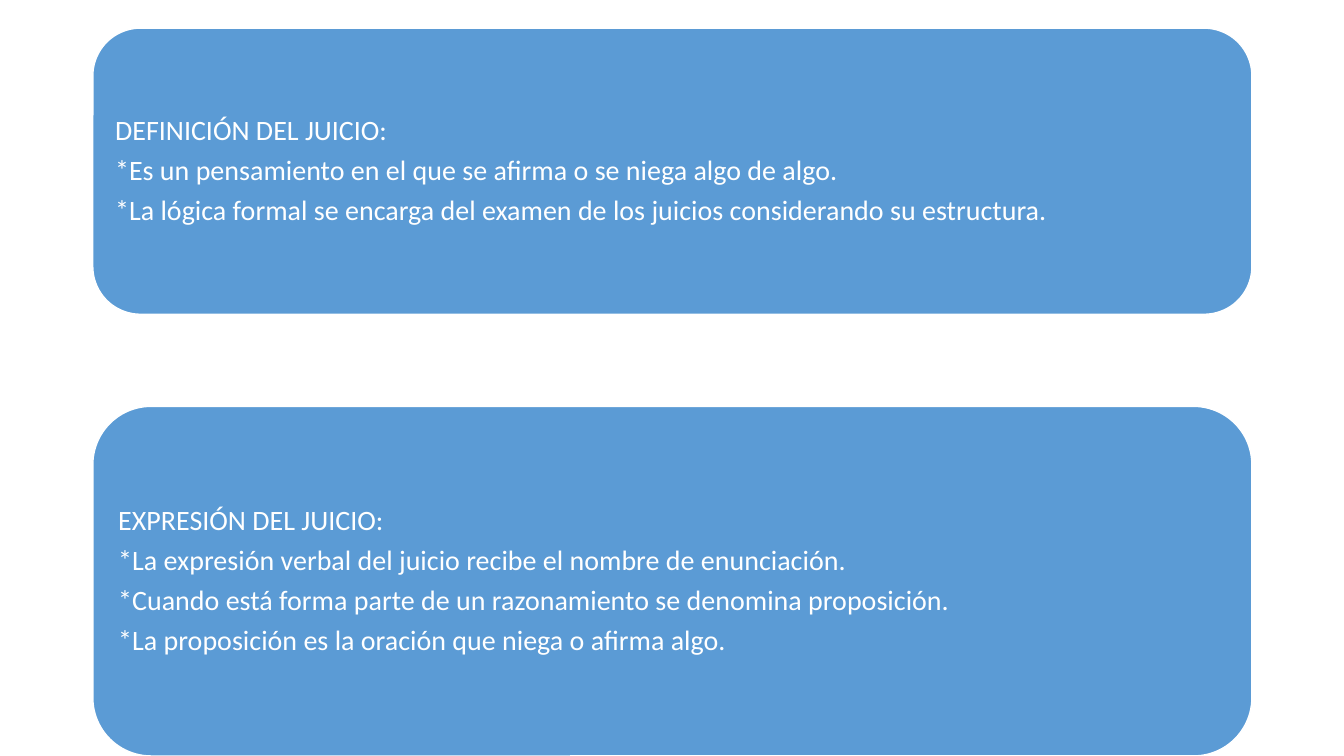
from pptx import Presentation
from pptx import util as u
from pptx.dml.color import RGBColor
from pptx.enum import shapes, text

COLOURS = {"panel": "5B9BD5", "light": "FFFFFF"}

PANELS = [
    (0.71, 7.21, [
        "DEFINICIÓN DEL JUICIO:",
        "*Es un pensamiento en el que se afirma o se niega algo de algo.",
        "*La lógica formal se encarga del examen de los juicios considerando su estructura.",
    ]),
    (10.24, 8.81, [
        "EXPRESIÓN DEL JUICIO:",
        "*La expresión verbal del juicio recibe el nombre de enunciación.",
        "*Cuando está forma parte de un razonamiento se denomina proposición.",
        "*La proposición es la oración que niega o afirma algo.",
    ]),
]


class PanelSlide:
    """Holds the text style and the page that receives the panels."""

    font = "Calibri"
    size = 20
    left, width = 2.34, 29.21
    inset = 0.21

    def __init__(self, deck):
        self.page = deck.slides.add_slide(deck.slide_layouts[6])

    def colour(self, name):
        return RGBColor.from_string(COLOURS[name])

    def panel(self, top, height, lines):
        box = self.page.shapes.add_shape(
            shapes.MSO_SHAPE.ROUNDED_RECTANGLE,
            u.Cm(self.left), u.Cm(top), u.Cm(self.width), u.Cm(height))
        box.shadow.inherit = False
        box.fill.solid()
        box.fill.fore_color.rgb = self.colour("panel")
        box.line.color.rgb = self.colour("light")
        box.line.width = u.Pt(1)
        frame = box.text_frame
        frame.word_wrap = True
        frame.vertical_anchor = text.MSO_ANCHOR.MIDDLE
        frame.margin_left = frame.margin_right = u.Cm(self.inset)
        frame.margin_top = frame.margin_bottom = u.Cm(self.inset)
        for index, line in enumerate(lines):
            para = frame.add_paragraph() if index else frame.paragraphs[0]
            self.text_line(para, line)

    def text_line(self, para, line):
        para.alignment = text.PP_ALIGN.LEFT
        para.line_spacing = 0.9
        para.space_after = u.Pt(7)
        span = para.add_run()
        span.text = line
        span.font.name = self.font
        span.font.size = u.Pt(self.size)
        span.font.color.rgb = self.colour("light")


def main():
    deck = Presentation()
    deck.slide_width = u.Cm(33.87)
    deck.slide_height = u.Cm(19.05)
    slide = PanelSlide(deck)
    for top, height, lines in PANELS:
        slide.panel(top, height, lines)
    deck.save("out.pptx")


if __name__ == "__main__":
    main()
